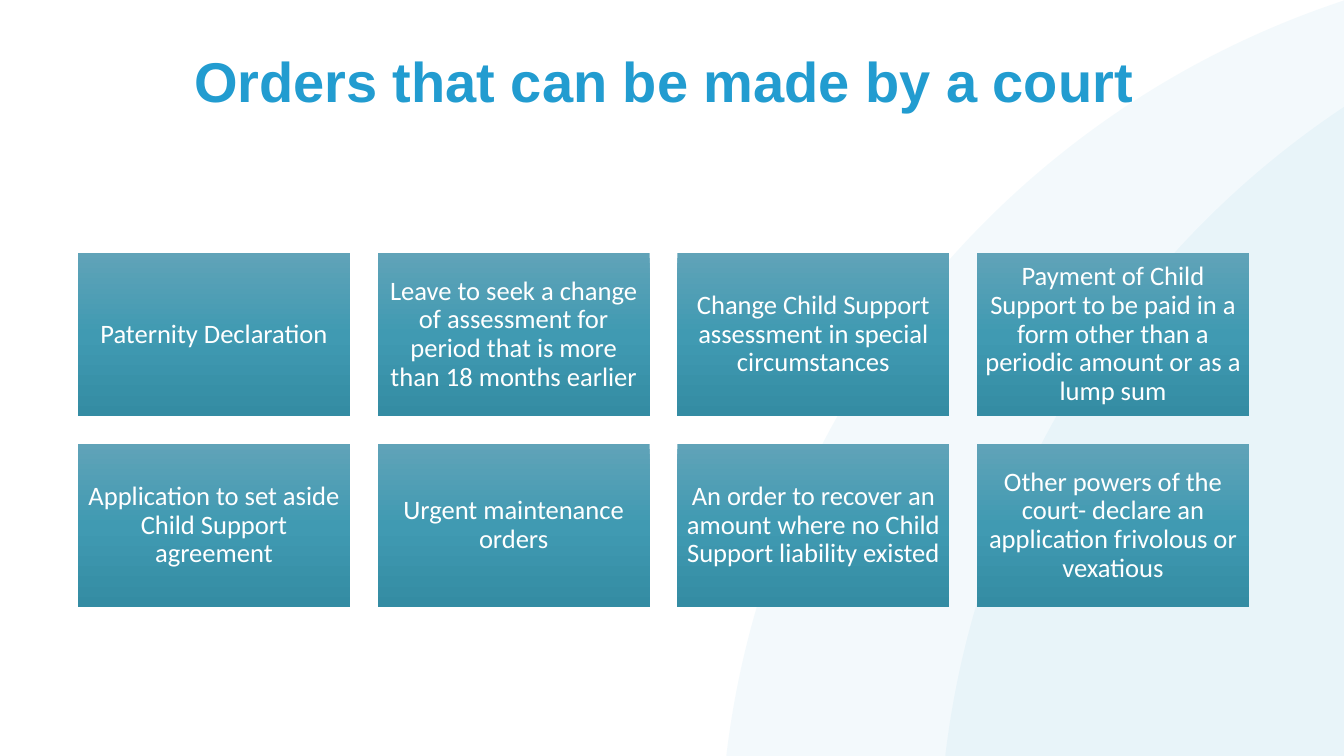
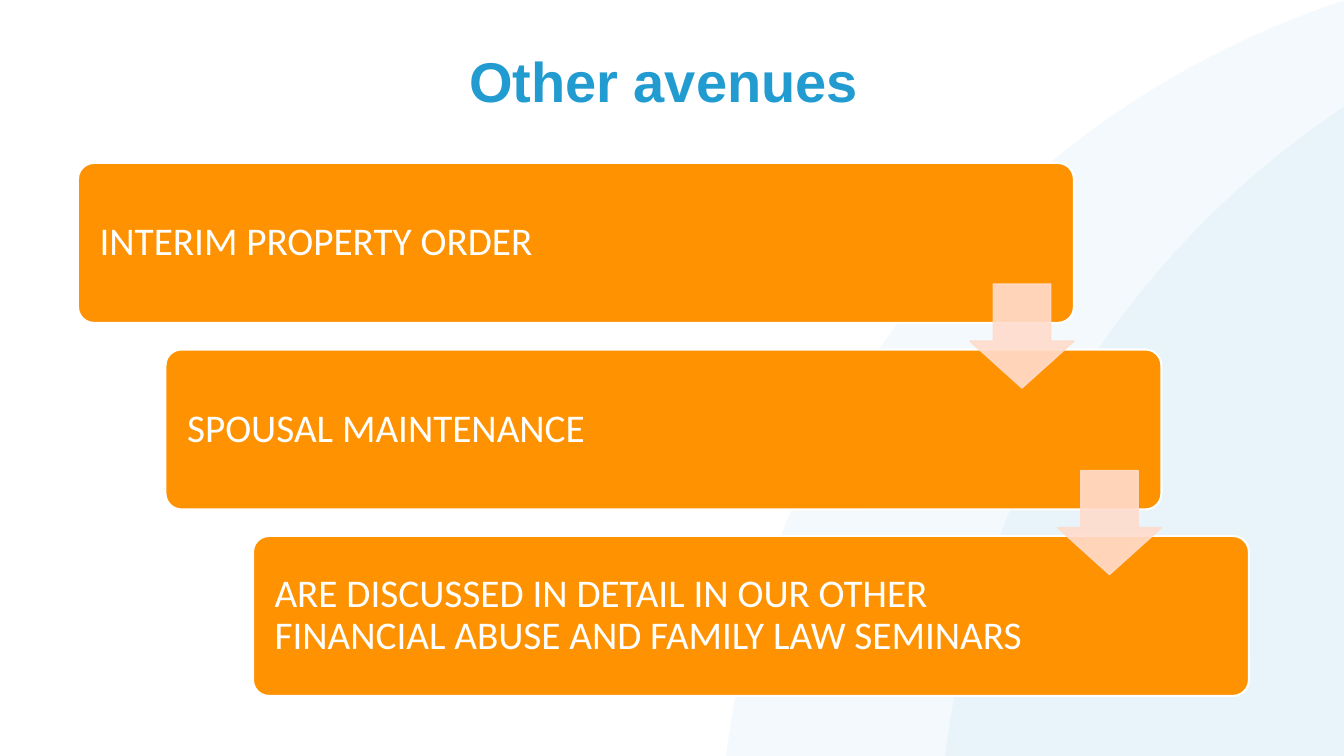
from copy import deepcopy

from pptx import Presentation
from pptx import util as u
from pptx.dml.color import RGBColor
from pptx.enum import shapes, text
from pptx.oxml.ns import qn
from pptx.oxml.xmlchemy import OxmlElement

PX = 914400 / 100.8
COLORS = {
    "blue": "229CD0",
    "white": "FFFFFF",
    "orange": "FF9200",
    "peach": "FFDCCC",
}
TEAL_GRADIENT = ["60A3B8", "409AB2", "348CA3"]
SHAPE = shapes.MSO_SHAPE
ALIGN = text.PP_ALIGN
ANCHOR = text.MSO_ANCHOR

ORDERS = [
    "Paternity Declaration",
    "Leave to seek a change of assessment for period that is more than 18 months earlier",
    "Change Child Support assessment in special circumstances",
    "Payment of Child Support to be paid in a form other than a periodic amount or as a lump sum",
    "Application to set aside Child Support agreement",
    "Urgent maintenance orders",
    "An order to recover an amount where no Child Support liability existed",
    "Other powers of the court- declare an application frivolous or vexatious",
]
AVENUES = [
    "INTERIM PROPERTY ORDER",
    "SPOUSAL MAINTENANCE",
    "ARE DISCUSSED IN DETAIL IN OUR OTHER FINANCIAL ABUSE AND FAMILY LAW SEMINARS",
]


def px(value):
    return u.Emu(round(value * PX))


def rgb(name):
    return RGBColor.from_string(COLORS[name])


def add_shape(slide, kind, box, fill=None, line=None, line_width=1):
    shape = slide.shapes.add_shape(kind, *map(px, box))
    shape.shadow.inherit = False
    if fill:
        shape.fill.solid()
        shape.fill.fore_color.rgb = rgb(fill)
    if line:
        shape.line.color.rgb = rgb(line)
        shape.line.width = u.Pt(line_width)
    else:
        shape.line.fill.background()
    return shape


def set_opacity(shape, percent):
    for color in shape.element.spPr.iter(qn("a:srgbClr")):
        alpha = OxmlElement("a:alpha")
        alpha.set("val", str(percent * 1000))
        color.append(alpha)


def set_gradient(shape, colors):
    shape.fill.gradient()
    shape.fill.gradient_angle = 270
    stop_list = shape.element.spPr.find(".//" + qn("a:gsLst"))
    for _ in colors[2:]:
        stop_list.insert(1, deepcopy(stop_list[0]))
    for index, stop in enumerate(shape.fill.gradient_stops):
        stop.position = index / (len(colors) - 1)
        stop.color.rgb = RGBColor.from_string(colors[index])


def write(shape, words, font, size, color, align, anchor, margins, bold=False):
    frame = shape.text_frame
    frame.text = words
    frame.word_wrap = True
    frame.auto_size = text.MSO_AUTO_SIZE.NONE
    frame.vertical_anchor = anchor
    frame.margin_left, frame.margin_top, frame.margin_right, frame.margin_bottom = map(px, margins)
    paragraph = frame.paragraphs[0]
    paragraph.alignment = align
    paragraph.line_spacing = 0.9
    paragraph.font.name = font
    paragraph.font.size = u.Pt(size)
    paragraph.font.bold = bold
    paragraph.font.color.rgb = rgb(color)


def add_master_arcs(presentation, slide):
    master_tree = presentation.slide_master.shapes.element
    for index, left in enumerate((720, 939)):
        arc = add_shape(slide, SHAPE.OVAL, (left, -45, 1816, 1816), "blue")
        set_opacity(arc, 5)
        arc.element.nvSpPr.cNvPr.set("id", str(101 + index))
        master_tree.insert(2 + index, arc.element)


def add_titled_slide(presentation, title):
    slide = presentation.slides.add_slide(presentation.slide_layouts[5])
    placeholder = slide.shapes.title
    placeholder.left, placeholder.top, placeholder.width, placeholder.height = map(px, (78, 49, 1171, 98))
    write(placeholder, title, "Arial", 40, "blue", ALIGN.CENTER, ANCHOR.TOP, (10, 5, 10, 5), bold=True)
    return slide


def add_card_grid(slide, box, items, columns=4, card_width=272, card_height=163):
    left, top, width, height = box
    rows = len(items) // columns
    step_x = (width - card_width) / (columns - 1)
    step_y = (height - card_height) / (rows - 1)
    for index, words in enumerate(items):
        row, column = divmod(index, columns)
        card_box = (left + column * step_x, top + row * step_y, card_width, card_height)
        card = add_shape(slide, SHAPE.RECTANGLE, card_box)
        set_gradient(card, TEAL_GRADIENT)
        write(card, words, "Calibri", 19, "white", ALIGN.CENTER, ANCHOR.MIDDLE, (8, 8, 8, 8))


def add_staircase(slide, box, items, bar_width=996, bar_height=160, arrow_size=104):
    left, top, width, height = box
    step_x = (width - bar_width) / (len(items) - 1)
    step_y = (height - bar_height) / (len(items) - 1)
    corners = [(left + i * step_x, top + i * step_y) for i in range(len(items))]
    for (x, y), words in zip(corners, items):
        bar = add_shape(slide, SHAPE.ROUNDED_RECTANGLE, (x, y, bar_width, bar_height), "orange", "white", 1.5)
        bar.adjustments[0] = 0.1
        write(bar, words, "Calibri", 28, "white", ALIGN.LEFT, ANCHOR.MIDDLE, (17, 17, 210, 17))
    for x, y in corners[:-1]:
        arrow_box = (x + bar_width - arrow_size, y + 121, arrow_size, arrow_size)
        arrow = add_shape(slide, SHAPE.DOWN_ARROW, arrow_box, "peach", "peach")
        arrow.adjustments[0] = 0.55
        arrow.adjustments[1] = 0.45
        set_opacity(arrow, 90)


def main():
    presentation = Presentation()
    presentation.slide_width = px(1344)
    presentation.slide_height = px(756)

    orders = add_titled_slide(presentation, "Orders that can be made by a court")
    add_master_arcs(presentation, orders)
    add_card_grid(orders, (78, 253, 1171, 354), ORDERS)

    avenues = add_titled_slide(presentation, "Other avenues")
    add_staircase(avenues, (78, 163, 1171, 533), AVENUES)

    presentation.save("out.pptx")


if __name__ == "__main__":
    main()
